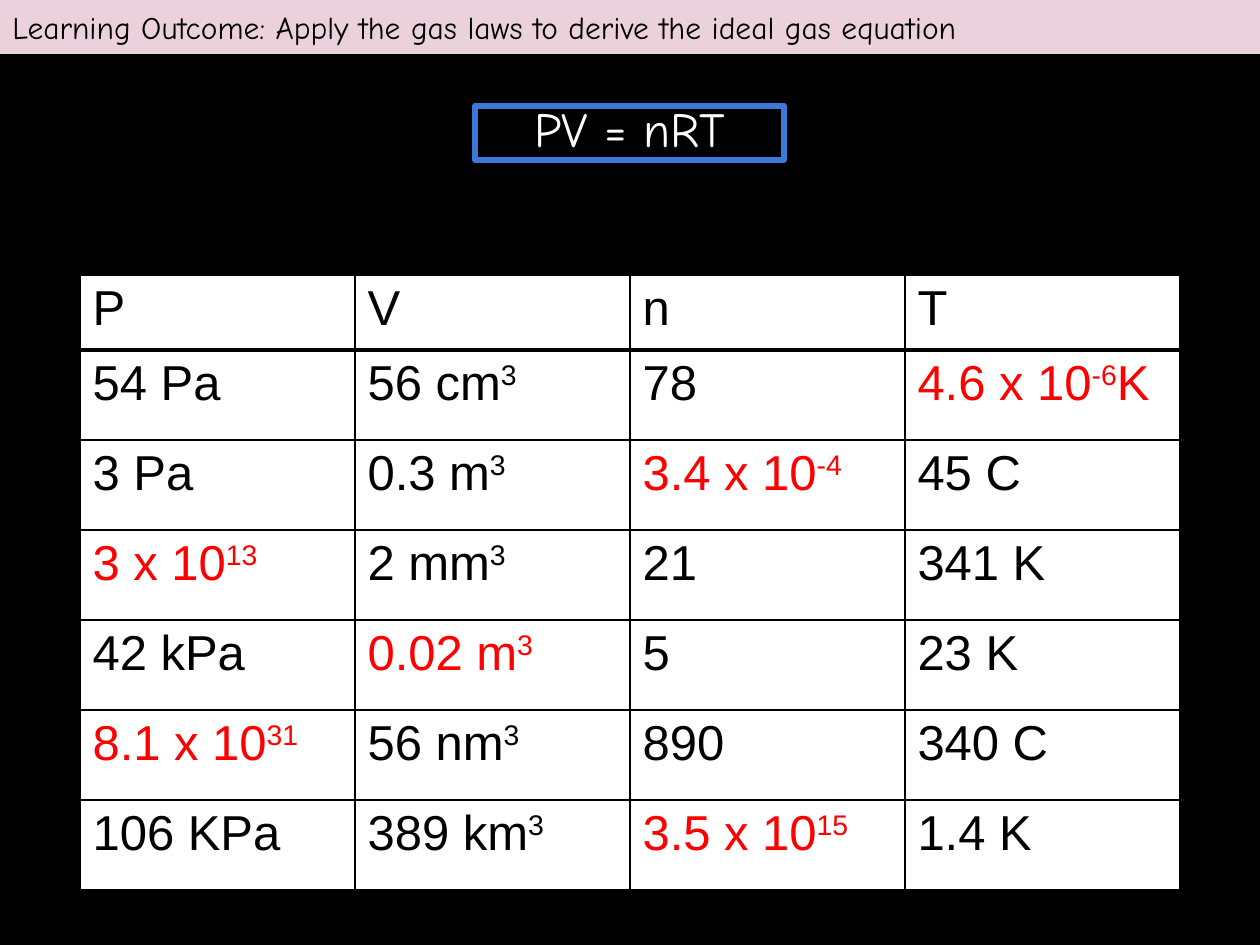
import pptx
import pptx.util
import pptx.dml.color
import pptx.enum.shapes
import pptx.enum.text
import pptx.oxml.ns
import lxml.etree

PX = 914400 / 126
RED, BLACK, WHITE = "FF0000", "000000", "FFFFFF"


def color(hex_text):
    return pptx.dml.color.RGBColor.from_string(hex_text)


def px(*lengths):
    return [pptx.util.Emu(round(length * PX)) for length in lengths]


deck = pptx.Presentation()
deck.slide_width, deck.slide_height = px(1260, 945)
page = deck.slides.add_slide(deck.slide_layouts[6])
page.background.fill.solid()
page.background.fill.fore_color.rgb = color(BLACK)

rows = [
    ["P", "V", "n", "T"],
    ["54 Pa", "56 cm^3", "78", "4.6 x 10^-6^K"],
    ["3 Pa", "0.3 m^3", "3.4 x 10^-4", "45 C"],
    ["3 x 10^13", "2 mm^3", "21", "341 K"],
    ["42 kPa", "0.02 m^3", "5", "23 K"],
    ["8.1 x 10^31", "56 nm^3", "890", "340 C"],
    ["106 KPa", "389 km^3", "3.5 x 10^15", "1.4 K"],
]
answers = {(1, 3), (2, 2), (3, 0), (4, 1), (5, 0), (6, 2)}

table = page.shapes.add_table(len(rows), 4, *px(80, 275, 1100, 615)).table
table.first_row = False
table.horz_banding = False
for column in table.columns:
    column.width = px(275)[0]
for row_index, values in enumerate(rows):
    table.rows[row_index].height = px(90 if row_index else 75)[0]
    for column_index, value in enumerate(values):
        cell = table.cell(row_index, column_index)
        para = cell.text_frame.paragraphs[0]
        for part_index, part in enumerate(value.split("^")):
            span = para.add_run()
            span.text = part
            span.font.name = "Arial"
            span.font.size = pptx.util.Pt(28)
            span.font.color.rgb = color(RED if (row_index, column_index) in answers else BLACK)
            if part_index % 2:
                span.font._element.set("baseline", "30000")
        properties = cell._tc.get_or_add_tcPr()
        for side in ("L", "R", "T", "B"):
            thick = (row_index, side) in {(0, "B"), (1, "T")}
            border = lxml.etree.SubElement(properties, pptx.oxml.ns.qn(f"a:ln{side}"))
            border.set("w", str(pptx.util.Pt(3 if thick else 1)))
            fill = lxml.etree.SubElement(border, pptx.oxml.ns.qn("a:solidFill"))
            lxml.etree.SubElement(fill, pptx.oxml.ns.qn("a:srgbClr")).set("val", BLACK)
        cell.fill.solid()
        cell.fill.fore_color.rgb = color(WHITE)

left, center = pptx.enum.text.PP_ALIGN.LEFT, pptx.enum.text.PP_ALIGN.CENTER
labels = [
    ("Learning Outcome: Apply the gas laws to derive the ideal gas equation",
     (0, 0, 1260, 54), "EAD1DC", None, 18, BLACK, left),
    ("PV = nRT", (475, 106, 309, 54), None, "3C78D8", 28, WHITE, center),
]
for text, place, fill, line, size, ink, align in labels:
    box = page.shapes.add_shape(pptx.enum.shapes.MSO_SHAPE.RECTANGLE, *px(*place))
    box.shadow.inherit = False
    if fill:
        box.fill.solid()
        box.fill.fore_color.rgb = color(fill)
    else:
        box.fill.background()
    if line:
        box.line.color.rgb = color(line)
        box.line.width = pptx.util.Pt(3)
    else:
        box.line.fill.background()
    box.text_frame.text = text
    box.text_frame.word_wrap = True
    box.text_frame.vertical_anchor = pptx.enum.text.MSO_ANCHOR.MIDDLE
    para = box.text_frame.paragraphs[0]
    para.alignment = align
    if align == center:
        para.line_spacing = 0.8
        para.space_before = pptx.util.Pt(5.9)
    span = para.runs[0]
    span.font.name = "Comic Neue"
    span.font.size = pptx.util.Pt(size)
    span.font.color.rgb = color(ink)

deck.save("out.pptx")
